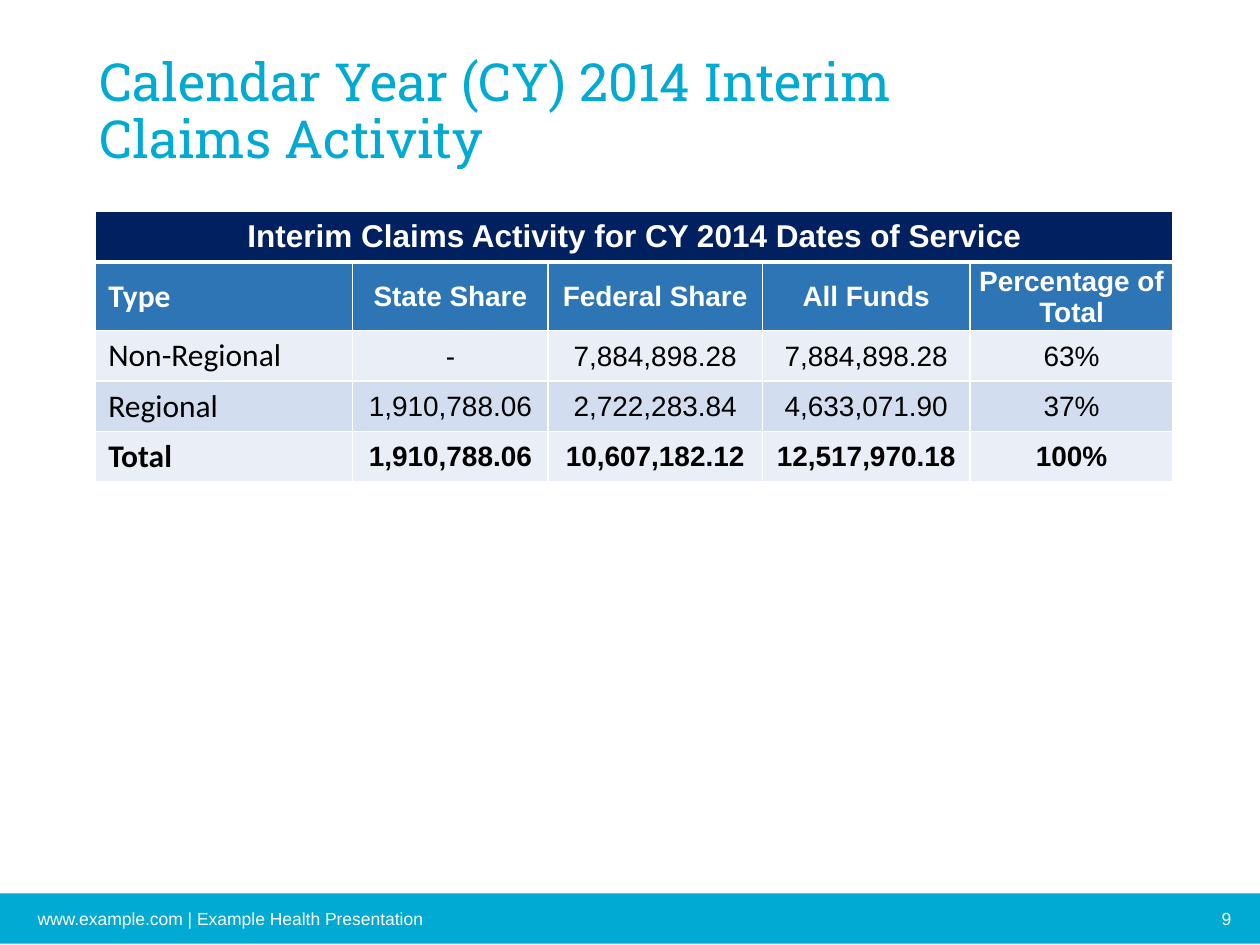
"""Build the interim claims activity slide: title, claims table and footer."""
from dataclasses import dataclass

import pptx
import pptx.dml.color
import pptx.enum.shapes
import pptx.enum.text
import pptx.oxml
import pptx.oxml.ns
import pptx.util

ALIGN = pptx.enum.text.PP_ALIGN
ANCHOR = pptx.enum.text.MSO_ANCHOR


@dataclass(frozen=True)
class Theme:
    """Colours, fonts and type sizes of the slide."""
    accent: str = "00AAD2"
    white: str = "FFFFFF"
    black: str = "000000"
    banner: str = "002060"
    header: str = "2E75B6"
    bands: tuple[str, str] = ("EAEFF7", "D2DEEF")
    title_font: str = "Roboto Slab"
    label_font: str = "Calibri"
    body_font: str = "Arial"
    title_size: int = 30
    label_size: int = 18
    figure_size: int = 16
    footer_size: int = 10
    rule: int = 1
    banner_rule: int = 3


@dataclass(frozen=True)
class Area:
    """Rectangle in inches on the slide grid."""
    left: float
    top: float
    width: float
    height: float

    def lengths(self) -> list[int]:
        """Return the four sides as slide lengths."""
        return [pptx.util.Inches(side) for side in
                (self.left, self.top, self.width, self.height)]


@dataclass(frozen=True)
class Style:
    """Look of one piece of text."""
    font: str
    size: int
    color: str
    bold: bool = False
    align: ALIGN = ALIGN.LEFT


@dataclass(frozen=True)
class Caption:
    """Free text with its area and look."""
    text: str
    area: Area
    style: Style
    anchor: ANCHOR = ANCHOR.TOP
    line_spacing: float = 1.0


@dataclass(frozen=True)
class ClaimsRow:
    """One table row with its fill and text colour."""
    texts: tuple[str, ...]
    fill: str
    color: str
    bold: bool = False


THEME = Theme()
WIDTH, HEIGHT = 10, 7.5
FOOTER_TOP = 7.16
COLUMNS = (2.04, 1.55, 1.7, 1.65, 1.61)
ROWS = (0.4, 0.5, 0.4, 0.4, 0.4)
TABLE = Area(0.76, 1.68, sum(COLUMNS), sum(ROWS))
BANNER = "Interim Claims Activity for CY 2014 Dates of Service"
CLAIMS = (
    ClaimsRow(("Type", "State Share", "Federal Share", "All Funds", "Percentage of Total"),
              THEME.header, THEME.white, True),
    ClaimsRow(("Non-Regional", "-", "7,884,898.28", "7,884,898.28", "63%"),
              THEME.bands[0], THEME.black),
    ClaimsRow(("Regional", "1,910,788.06", "2,722,283.84", "4,633,071.90", "37%"),
              THEME.bands[1], THEME.black),
    ClaimsRow(("Total", "1,910,788.06", "10,607,182.12", "12,517,970.18", "100%"),
              THEME.bands[0], THEME.black, True),
)
CAPTIONS = (
    Caption("Calendar Year (CY) 2014 Interim\vClaims Activity", Area(0.69, 0.4, 8.62, 0.99),
            Style(THEME.title_font, THEME.title_size, THEME.accent), ANCHOR.MIDDLE, 0.9),
    Caption("www.example.com | Example Health Presentation", Area(0.2, FOOTER_TOP, 7.4, 0.2),
            Style(THEME.body_font, THEME.footer_size, THEME.white)),
    Caption("9", Area(7.62, FOOTER_TOP, 2.25, 0.2),
            Style(THEME.body_font, THEME.footer_size, THEME.white, align=ALIGN.RIGHT)),
)


def rgb(value: str) -> pptx.dml.color.RGBColor:
    """Turn a hex string into a colour."""
    return pptx.dml.color.RGBColor.from_string(value)


def write(frame, text: str, style: Style, line_spacing: float = 1.0) -> None:
    """Fill a text frame and format its runs."""
    frame.text = text
    for paragraph in frame.paragraphs:
        paragraph.alignment = style.align
        paragraph.line_spacing = line_spacing
        for run in paragraph.runs:
            run.font.name = style.font
            run.font.size = pptx.util.Pt(style.size)
            run.font.bold = style.bold
            run.font.color.rgb = rgb(style.color)


def draw_caption(slide, caption: Caption) -> None:
    """Draw one wrapped text box."""
    frame = slide.shapes.add_textbox(*caption.area.lengths()).text_frame
    frame.word_wrap = True
    frame.vertical_anchor = caption.anchor
    write(frame, caption.text, caption.style, caption.line_spacing)


def draw_footer_bar(slide) -> None:
    """Draw the coloured strip at the foot of the slide."""
    bar = slide.shapes.add_shape(pptx.enum.shapes.MSO_SHAPE.RECTANGLE,
                                 *Area(0, 7.09, WIDTH, 0.4).lengths())
    bar.shadow.inherit = False
    bar.fill.solid()
    bar.fill.fore_color.rgb = rgb(THEME.accent)
    bar.line.fill.background()


def paint_cell(cell, fill: str, top: int, bottom: int) -> None:
    """Give a cell its rules, fill and anchor."""
    rules = {"lnL": THEME.rule, "lnR": THEME.rule, "lnT": top, "lnB": bottom}
    properties = cell._tc.get_or_add_tcPr()
    for side, points in rules.items():
        properties.append(pptx.oxml.parse_xml(
            f'<a:{side} {pptx.oxml.ns.nsdecls("a")} w="{pptx.util.Pt(points)}">'
            f'<a:solidFill><a:srgbClr val="{THEME.white}"/></a:solidFill></a:{side}>'))
    cell.fill.solid()
    cell.fill.fore_color.rgb = rgb(fill)
    cell.vertical_anchor = ANCHOR.MIDDLE


def draw_claims_row(table, index: int, row: ClaimsRow) -> None:
    """Draw a label cell followed by centred figures."""
    top = THEME.banner_rule if index == 1 else THEME.rule
    for column, text in enumerate(row.texts):
        cell = table.cell(index, column)
        paint_cell(cell, row.fill, top, THEME.rule)
        if column == 0:
            style = Style(THEME.label_font, THEME.label_size, row.color, row.bold)
        else:
            style = Style(THEME.body_font, THEME.figure_size, row.color, row.bold, ALIGN.CENTER)
            cell.margin_left = cell.margin_top = cell.margin_right = pptx.util.Inches(0.01)
            cell.margin_bottom = 0
        write(cell.text_frame, text, style)


def draw_table(slide) -> None:
    """Draw the claims table under its merged banner."""
    table = slide.shapes.add_table(len(ROWS), len(COLUMNS), *TABLE.lengths()).table
    for column, width in zip(table.columns, COLUMNS):
        column.width = pptx.util.Inches(width)
    for row, height in zip(table.rows, ROWS):
        row.height = pptx.util.Inches(height)
    for column in range(len(COLUMNS)):
        paint_cell(table.cell(0, column), THEME.banner, THEME.rule, THEME.banner_rule)
    banner = table.cell(0, 0)
    banner.merge(table.cell(0, len(COLUMNS) - 1))
    write(banner.text_frame, BANNER,
          Style(THEME.body_font, THEME.label_size, THEME.white, True, ALIGN.CENTER))
    for index, row in enumerate(CLAIMS, start=1):
        draw_claims_row(table, index, row)


def main() -> None:
    """Build and save the slide."""
    deck = pptx.Presentation()
    deck.slide_width, deck.slide_height = pptx.util.Inches(WIDTH), pptx.util.Inches(HEIGHT)
    slide = deck.slides.add_slide(deck.slide_layouts[6])
    draw_footer_bar(slide)
    for caption in CAPTIONS:
        draw_caption(slide, caption)
    draw_table(slide)
    deck.save("out.pptx")


if __name__ == "__main__":
    main()
